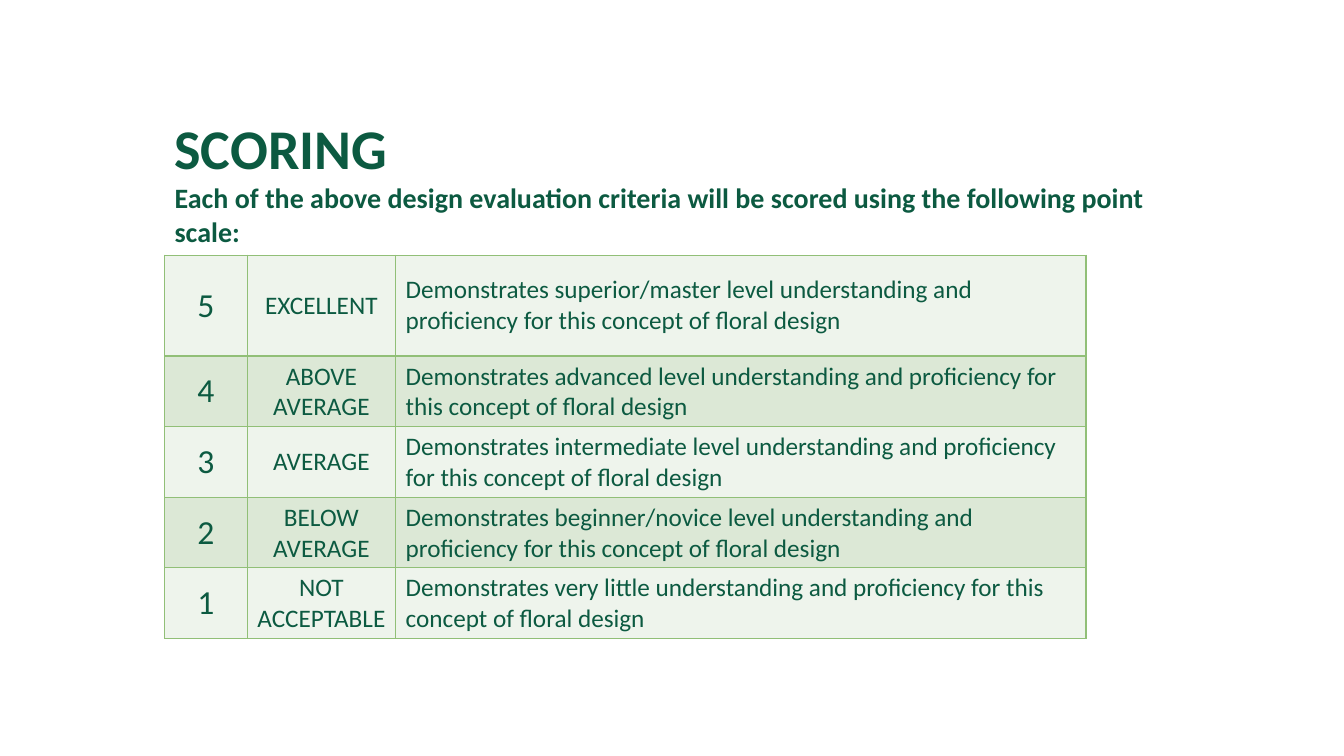
from dataclasses import dataclass

from lxml import etree
from pptx import Presentation
from pptx.dml.color import RGBColor
from pptx.enum.text import MSO_ANCHOR, PP_ALIGN
from pptx.oxml.ns import qn
from pptx.util import Cm, Pt

MIDDLE = MSO_ANCHOR.MIDDLE
LEFT, CENTER = PP_ALIGN.LEFT, PP_ALIGN.CENTER


@dataclass(frozen=True)
class Theme:
    font: str = "Calibri"
    text: str = "0C5A41"
    border: str = "91BF77"
    bands: tuple = ("EEF4EC", "DCE8D6")
    heading_size: int = 40
    intro_size: int = 20
    score_size: int = 24
    body_size: int = 18
    border_width: int = 1


THEME = Theme()

COLUMN_WIDTHS = (2.08, 3.74, 17.4)
ROW_HEIGHTS = (2.54, 1.78, 1.78, 1.78, 1.78)
SCALE = (
    ("5", "EXCELLENT", "Demonstrates superior/master level understanding and "
     "proficiency for this concept of floral design"),
    ("4", "ABOVE AVERAGE", "Demonstrates advanced level understanding and "
     "proficiency for this concept of floral design"),
    ("3", "AVERAGE", "Demonstrates intermediate level understanding and "
     "proficiency for this concept of floral design"),
    ("2", "BELOW AVERAGE", "Demonstrates beginner/novice level understanding and "
     "proficiency for this concept of floral design"),
    ("1", "NOT ACCEPTABLE", "Demonstrates very little understanding and "
     "proficiency for this concept of floral design"),
)


def add_run(paragraph, text, size, bold=False):
    run = paragraph.add_run()
    run.text = text
    run.font.name = THEME.font
    run.font.size = Pt(size)
    run.font.bold = bold
    run.font.color.rgb = RGBColor.from_string(THEME.text)


def add_heading(slide, left, top, width, height):
    text_frame = slide.shapes.add_textbox(left, top, width, height).text_frame
    text_frame.word_wrap = True
    text_frame.vertical_anchor = MIDDLE
    paragraph = text_frame.paragraphs[0]
    add_run(paragraph, "SCORING", THEME.heading_size, bold=True)
    paragraph.add_line_break()
    add_run(paragraph, "Each of the above design evaluation criteria will be scored "
            "using the following point scale:", THEME.intro_size, bold=True)


def add_borders(cell):
    properties = cell._tc.get_or_add_tcPr()
    for side in ("lnL", "lnR", "lnT", "lnB"):
        line = etree.SubElement(properties, qn(f"a:{side}"), w=str(Pt(THEME.border_width)))
        fill = etree.SubElement(line, qn("a:solidFill"))
        etree.SubElement(fill, qn("a:srgbClr"), val=THEME.border)


def fill_cell(cell, text, size, alignment, color):
    # Borders come before the fill in the cell's properties
    add_borders(cell)
    cell.fill.solid()
    cell.fill.fore_color.rgb = RGBColor.from_string(color)
    cell.vertical_anchor = MIDDLE
    paragraph = cell.text_frame.paragraphs[0]
    paragraph.alignment = alignment
    add_run(paragraph, text, size)


def add_scale_table(slide, left, top, width, height):
    table = slide.shapes.add_table(
        len(SCALE), len(COLUMN_WIDTHS), left, top, width, height).table
    table.first_row = False

    # Share the box out in proportion to the columns and rows
    for column, share in zip(table.columns, COLUMN_WIDTHS):
        column.width = round(width * share / sum(COLUMN_WIDTHS))
    for row, share in zip(table.rows, ROW_HEIGHTS):
        row.height = round(height * share / sum(ROW_HEIGHTS))

    # Score, rating and description, in alternating bands
    styles = ((THEME.score_size, CENTER), (THEME.body_size, CENTER), (THEME.body_size, LEFT))
    for row_index, texts in enumerate(SCALE):
        color = THEME.bands[row_index % len(THEME.bands)]
        for column_index, (text, (size, alignment)) in enumerate(zip(texts, styles)):
            fill_cell(table.cell(row_index, column_index), text, size, alignment, color)


def main():
    presentation = Presentation()
    presentation.slide_width = Cm(33.87)
    presentation.slide_height = Cm(19.05)
    slide = presentation.slides.add_slide(presentation.slide_layouts[6])

    left = Cm(4.15)
    add_heading(slide, left, Cm(2.95), Cm(25.58), Cm(3.2))
    add_scale_table(slide, left, Cm(6.43), Cm(sum(COLUMN_WIDTHS)), Cm(sum(ROW_HEIGHTS)))

    presentation.save("out.pptx")


if __name__ == "__main__":
    main()
